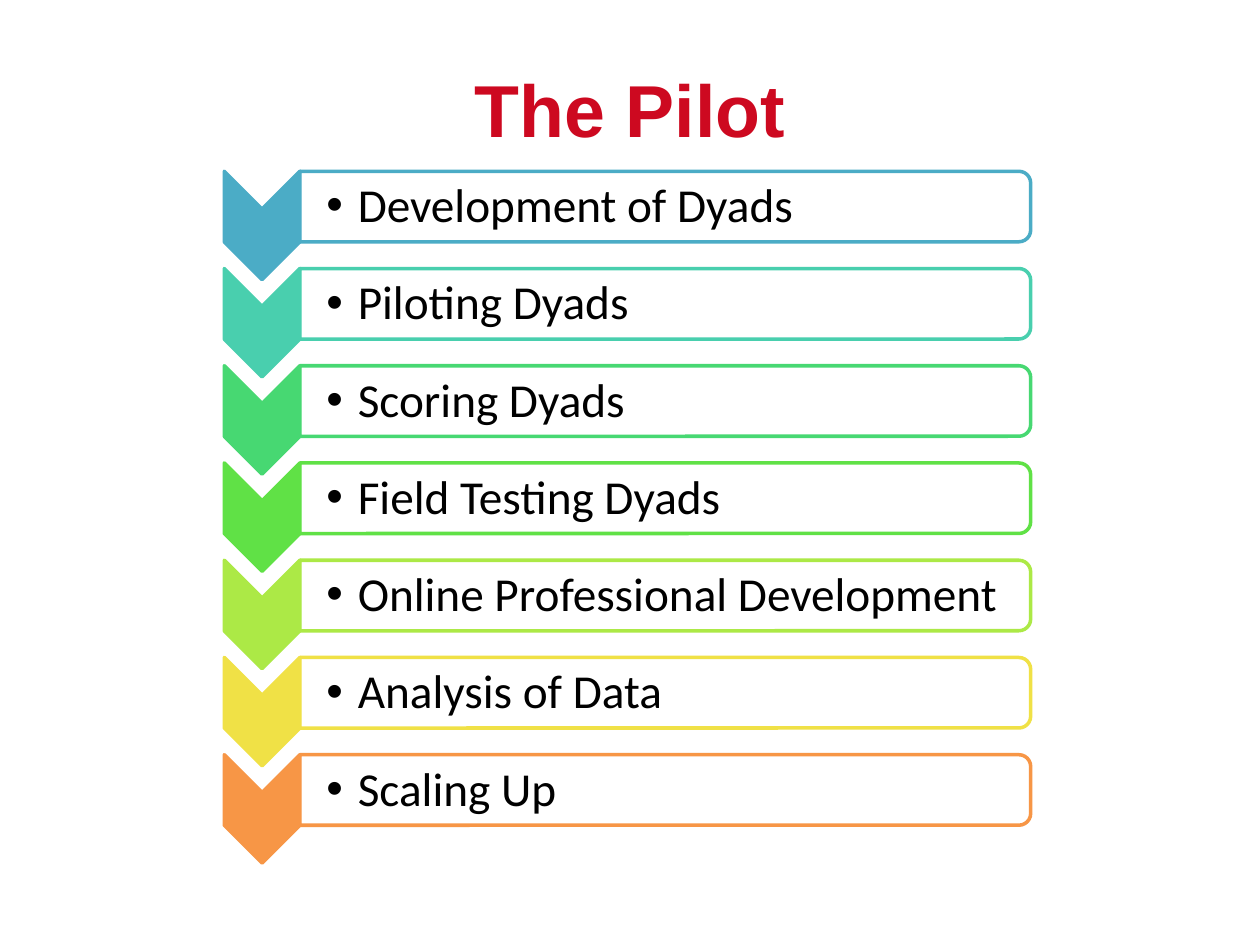
import pptx
import pptx.util
import pptx.dml.color
import pptx.enum.shapes
import pptx.enum.text
import pptx.oxml
import pptx.oxml.ns
import lxml.etree

Inches = pptx.util.Inches
Pt = pptx.util.Pt
MSO_SHAPE = pptx.enum.shapes.MSO_SHAPE
ANCHOR = pptx.enum.text.MSO_ANCHOR
qn = pptx.oxml.ns.qn

COLORS = {
    "title": "CD0920",
    "text": "000000",
    "panel": "FFFFFF",
    "blue": "4BACC6",
    "teal": "49CFAE",
    "green": "47D872",
    "lime": "60E146",
    "chartreuse": "ACE946",
    "yellow": "F0E146",
    "orange": "F79646",
}

STEPS = [
    ("Development of Dyads", "blue"),
    ("Piloting Dyads", "teal"),
    ("Scoring Dyads", "green"),
    ("Field Testing Dyads", "lime"),
    ("Online Professional Development", "chartreuse"),
    ("Analysis of Data", "yellow"),
    ("Scaling Up", "orange"),
]

CHEVRON_W, CHEVRON_H = 0.6, 0.86
BAR_H = 0.56


def rgb(name):
    return pptx.dml.color.RGBColor.from_string(COLORS[name])


def set_margins(tf, left, rest):
    tf.margin_left = Inches(left)
    tf.margin_top = tf.margin_right = tf.margin_bottom = Inches(rest)


def add_run(p, text, font, size, color, bold=False):
    r = p.add_run()
    r.text = text
    r.font.name = font
    r.font.size = Pt(size)
    r.font.bold = bold
    r.font.color.rgb = rgb(color)


def add_turned_shape(shapes, kind, x, y, w, h, fill, line):
    sp = shapes.add_shape(kind, Inches(x + (w - h) / 2), Inches(y + (h - w) / 2),
                          Inches(h), Inches(w))
    sp.rotation = 90
    sp.shadow.inherit = False
    sp.fill.solid()
    sp.fill.fore_color.rgb = rgb(fill)
    sp.line.color.rgb = rgb(line)
    sp.line.width = Pt(2)
    return sp


def add_bullet(p):
    pPr = p._p.get_or_add_pPr()
    pPr.set("marL", str(Inches(0.25)))
    pPr.set("indent", str(Inches(-0.25)))
    lxml.etree.SubElement(pPr, qn("a:buFont")).set("typeface", "Arial")
    lxml.etree.SubElement(pPr, qn("a:buChar")).set("char", "•")


def add_title(slide, x, y, w, h):
    sp = slide.shapes.title
    sp.left, sp.top, sp.width, sp.height = map(Inches, (x, y, w, h))
    tf = sp.text_frame
    set_margins(tf, 0, 0)
    p = tf.paragraphs[0]
    p.alignment = pptx.enum.text.PP_ALIGN.CENTER
    add_run(p, "The Pilot", "Arial", 42, "title", bold=True)


def add_step(shapes, x, y, w, text, color):
    add_turned_shape(shapes, MSO_SHAPE.CHEVRON, x, y,
                     CHEVRON_W, CHEVRON_H, color, color)
    bar_x, bar_w = x + CHEVRON_W, w - CHEVRON_W
    bar = add_turned_shape(shapes, MSO_SHAPE.ROUND_2_SAME_RECTANGLE, bar_x, y,
                           bar_w, BAR_H, "panel", color)
    fill = bar._element.spPr.find(qn("a:solidFill"))
    lxml.etree.SubElement(fill[0], qn("a:alpha")).set("val", "90000")

    tb = shapes.add_textbox(Inches(bar_x), Inches(y + 0.03),
                            Inches(bar_w - 0.03), Inches(BAR_H - 0.05))
    tf = tb.text_frame
    tf.word_wrap = True
    tf.vertical_anchor = ANCHOR.MIDDLE
    set_margins(tf, 0.21, 0.02)
    p = tf.paragraphs[0]
    add_bullet(p)
    p.level = 1
    p.line_spacing = 0.9
    add_run(p, text, "Calibri", 27, color="text")


def add_chevron_list(slide, x, y, w, h):
    group = slide.shapes.add_group_shape()
    pitch = (h - CHEVRON_H) / (len(STEPS) - 1)
    for i, (text, color) in enumerate(STEPS):
        add_step(group.shapes, x, y + i * pitch, w, text, color)


def main():
    prs = pptx.Presentation()
    prs.slide_width, prs.slide_height = Inches(10), Inches(7.5)
    slide = prs.slides.add_slide(prs.slide_layouts[5])
    add_title(slide, 0.5, 0.5, 9, 0.71)
    add_chevron_list(slide, 1.78, 1.36, 6.4, 5.49)
    prs.save("out.pptx")


if __name__ == "__main__":
    main()
